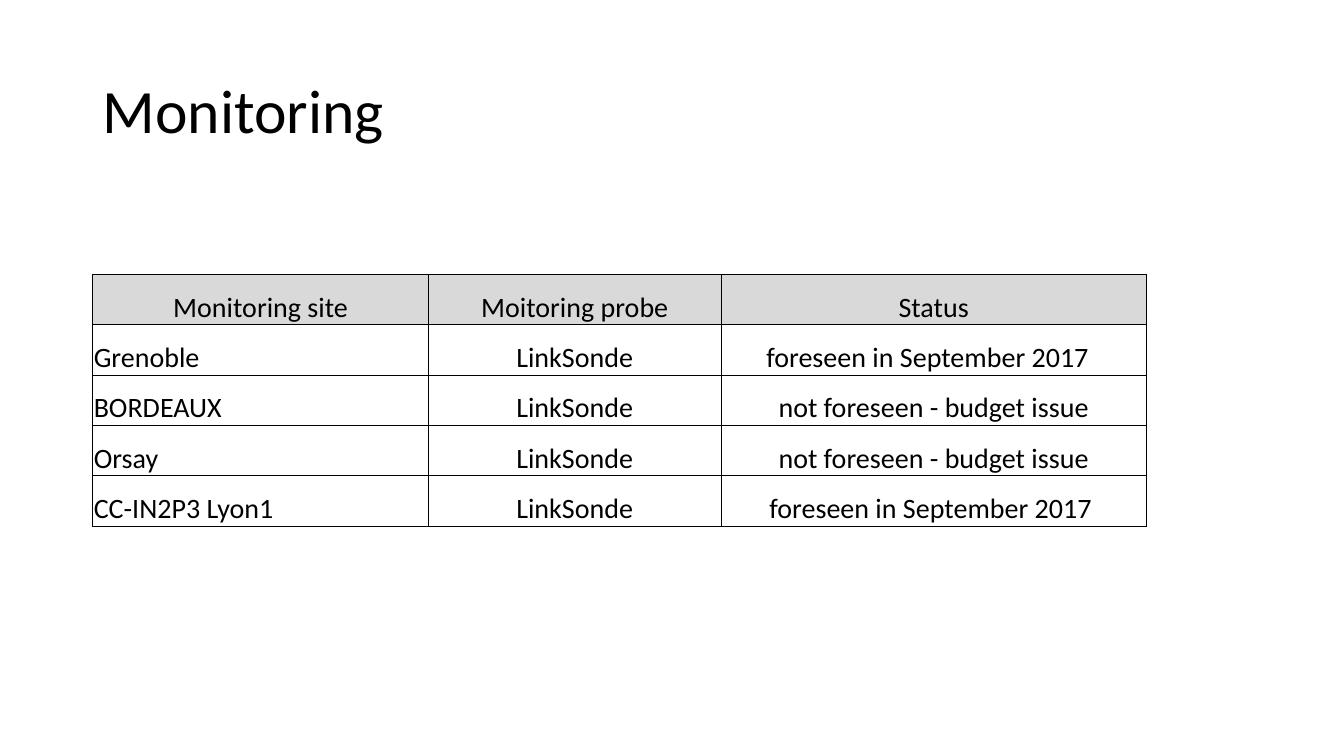
"""Build the Monitoring slide with its table of probe sites."""
from lxml.etree import SubElement
from pptx import Presentation
from pptx.dml.color import RGBColor
from pptx.enum.text import MSO_ANCHOR, PP_ALIGN
from pptx.oxml.ns import qn
from pptx.util import Inches, Pt

TITLE = "Monitoring"
ROWS = [
    ("Monitoring site", "Moitoring probe", "Status"),
    ("Grenoble", "LinkSonde", "foreseen in September 2017"),
    ("BORDEAUX", "LinkSonde", "not foreseen - budget issue"),
    ("Orsay", "LinkSonde", "not foreseen - budget issue"),
    ("CC-IN2P3 Lyon1", "LinkSonde", "foreseen in September 2017"),
]
COLS = (3.33, 2.9, 4.22)
INSETS = {(1, 2): 0.13, (4, 2): 0.07}
LEFT, TOP, STEP = 0.92, 2.72, 0.5
INK, HEAD, PAPER = "000000", "D9D9D9", "FFFFFF"
SIDES = ("a:lnL", "a:lnR", "a:lnT", "a:lnB")


def tint(code):
    return RGBColor.from_string(code)


def assign(item, values):
    for name, value in values.items():
        setattr(item, name, value)


def write(para, text, size, align):
    para.alignment = align
    run = para.add_run()
    run.text = text
    assign(run.font, {"name": "Calibri", "size": Pt(size)})
    run.font.color.rgb = tint(INK)


def border(cell):
    props = cell._tc.get_or_add_tcPr()
    for spot, side in enumerate(SIDES):
        line = SubElement(props, qn(side), w=str(Pt(0.5)))
        fill = SubElement(line, qn("a:solidFill"))
        SubElement(fill, qn("a:srgbClr"), val=INK)
        props.insert(spot, line)


def add_title(slide):
    box = slide.shapes.add_textbox(*map(Inches, (LEFT, 0.4, 11.5, 1.45)))
    frame = box.text_frame
    assign(frame, {"word_wrap": True, "vertical_anchor": MSO_ANCHOR.MIDDLE})
    para = frame.paragraphs[0]
    para.line_spacing = 0.9
    write(para, TITLE, 44, PP_ALIGN.LEFT)


def add_sites(slide):
    area = map(Inches, (LEFT, TOP, sum(COLS), STEP * len(ROWS)))
    table = slide.shapes.add_table(len(ROWS), len(COLS), *area).table
    assign(table, {"first_row": False, "horz_banding": False})
    for col, width in zip(table.columns, COLS):
        col.width = Inches(width)
    for r, row in enumerate(ROWS):
        for c, text in enumerate(row):
            cell = table.cell(r, c)
            assign(cell, {
                "margin_left": Inches(0.01),
                "margin_right": Inches(INSETS.get((r, c), 0.01)),
                "margin_top": Inches(0.01),
                "margin_bottom": 0,
                "vertical_anchor": MSO_ANCHOR.BOTTOM,
            })
            cell.fill.solid()
            cell.fill.fore_color.rgb = tint(PAPER if r else HEAD)
            border(cell)
            align = PP_ALIGN.LEFT if r and not c else PP_ALIGN.CENTER
            write(cell.text_frame.paragraphs[0], text, 20, align)


def main():
    deck = Presentation()
    assign(deck, {"slide_width": Inches(13.33), "slide_height": Inches(7.5)})
    slide = deck.slides.add_slide(deck.slide_layouts[6])
    add_title(slide)
    add_sites(slide)
    deck.save("out.pptx")


if __name__ == "__main__":
    main()
